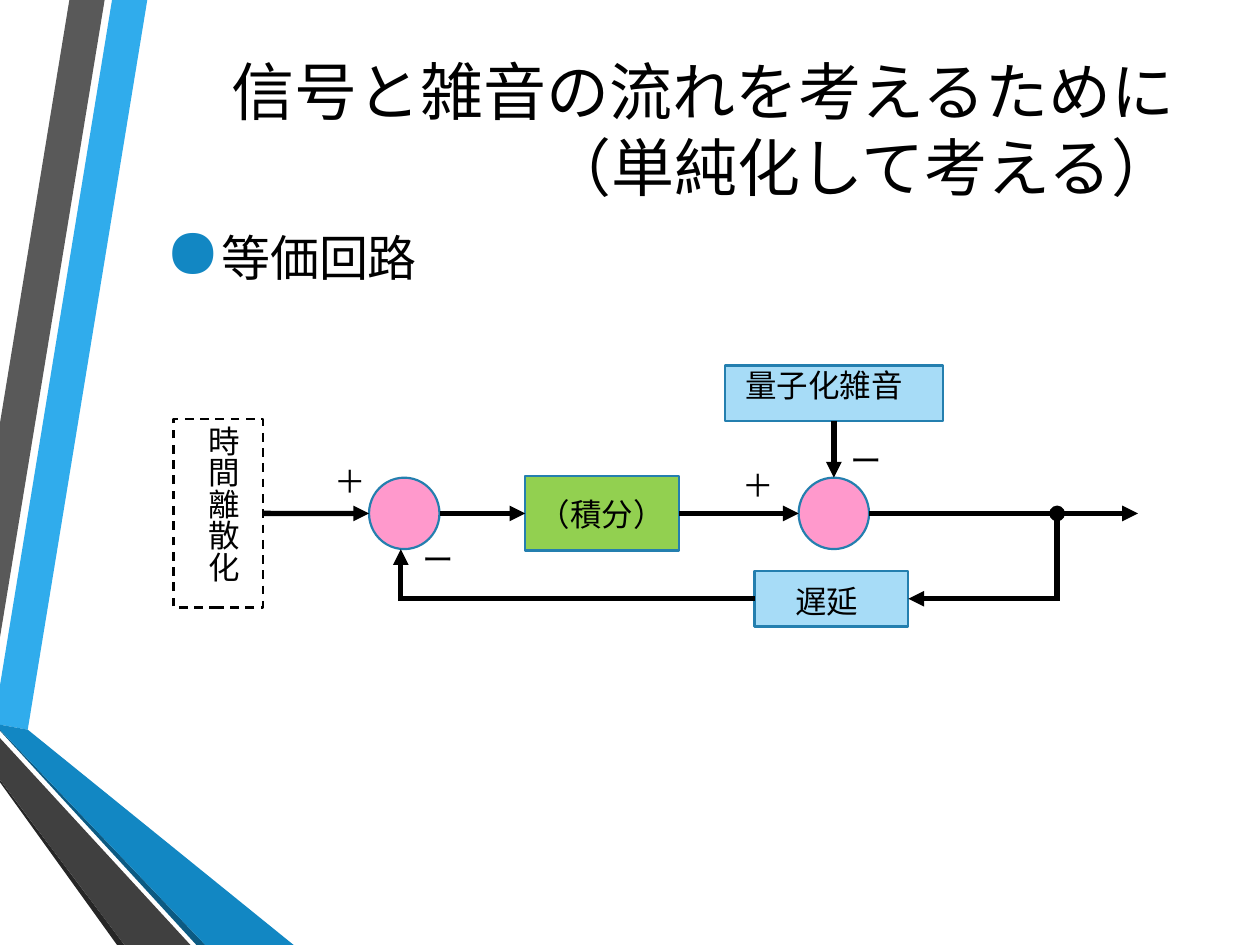
from lxml import etree
from pptx import Presentation
from pptx.dml.color import RGBColor
from pptx.enum.dml import MSO_LINE
from pptx.enum.shapes import MSO_CONNECTOR, MSO_SHAPE
from pptx.enum.text import MSO_ANCHOR, MSO_AUTO_SIZE, PP_ALIGN
from pptx.oxml.ns import qn
from pptx.util import Cm, Pt

RECT, OVAL = MSO_SHAPE.RECTANGLE, MSO_SHAPE.OVAL
STRAIGHT = MSO_CONNECTOR.STRAIGHT
DASH = MSO_LINE.DASH
CENTER, LEFT, RIGHT = PP_ALIGN.CENTER, PP_ALIGN.LEFT, PP_ALIGN.RIGHT
TOP, MIDDLE = MSO_ANCHOR.TOP, MSO_ANCHOR.MIDDLE
FIT_NONE = MSO_AUTO_SIZE.NONE
SIDE_LEFT, SIDE_BOTTOM, SIDE_RIGHT = 1, 2, 3

COLORS = {
    "ink": "000000",
    "outline": "247FAF",
    "sky": "A7DCF7",
    "green": "92D050",
    "pink": "FF99CC",
    "bright_blue": "30ACEC",
    "blue": "1287C3",
    "deep_blue": "0C5A82",
    "gray": "595959",
    "dark_gray": "404040",
    "charcoal": "262626",
}

RIBBONS = [
    ("bright_blue", [(0, 13.82), (0, 14.61), (0.56, 14.71), (2.97, 0), (2.26, 0)]),
    ("gray", [(2.11, 0), (1.4, 0), (0, 8.53), (0, 12.85)]),
    ("charcoal", [(0, 15.72), (0, 15.77), (2.36, 19.05), (2.51, 19.05)]),
    ("deep_blue", [(0, 14.71), (0, 14.73), (3.96, 19.05), (4.14, 19.05)]),
    ("blue", [(0, 14.71), (4.14, 19.05), (5.92, 19.05), (0.56, 14.71), (0, 14.61)]),
    ("dark_gray", [(0, 15.72), (2.51, 19.05), (3.84, 19.05), (0, 14.88)]),
]


def color(name):
    return RGBColor.from_string(COLORS[name])


def write(frame, text, size=18, font="Times New Roman", align=CENTER, anchor=TOP,
          vertical=False):
    frame.word_wrap = True
    frame.auto_size = FIT_NONE
    frame.vertical_anchor = anchor
    if vertical:
        frame._txBody.bodyPr.set("vert", "eaVert")
    paragraph = frame.paragraphs[0]
    paragraph.text = text
    paragraph.alignment = align
    for run in paragraph.runs:
        run.font.size = Pt(size)
        run.font.name = font
        run.font.color.rgb = color("ink")
    return paragraph


def draw_ribbons(slide, left, top):
    for fill, points in RIBBONS:
        corners = [(Cm(left + x), Cm(top + y)) for x, y in points]
        builder = slide.shapes.build_freeform(*corners[0])
        builder.add_line_segments(corners[1:], close=True)
        ribbon = builder.convert_to_shape()
        ribbon.shadow.inherit = False
        ribbon.fill.solid()
        ribbon.fill.fore_color.rgb = color(fill)
        ribbon.line.fill.background()


def place_title(slide, left, top, width, height):
    title = slide.shapes.title
    title.left, title.top, title.width, title.height = map(Cm, (left, top, width, height))
    write(title.text_frame, "信号と雑音の流れを考えるために\v（単純化して考える）",
          size=36, font="Calibri", align=RIGHT, anchor=MIDDLE)


def place_topic(slide, left, top, width, height):
    topic = slide.shapes.add_textbox(*map(Cm, (left, top, width, height)))
    paragraph = write(topic.text_frame, "等価回路", size=28, align=LEFT)
    paragraph.space_after = Pt(6)
    props = paragraph._p.get_or_add_pPr()
    props.set("marL", str(Cm(0.79)))
    props.set("indent", str(-Cm(0.79)))
    bullet_color = etree.SubElement(props, qn("a:buClr"))
    etree.SubElement(bullet_color, qn("a:srgbClr"), val=COLORS["blue"])
    etree.SubElement(props, qn("a:buSzPct"), val="145000")
    etree.SubElement(props, qn("a:buChar"), char="●")


def draw_circuit(slide, left, top):
    axis, feedback = 3.1, 4.82
    feedback_x, tap_x, output_x = 4.58, 17.81, 19.44
    sum_width, sum_height = 1.42, 1.44

    def block(kind, x, middle, width, height, fill=None, line="outline", dash=None):
        shape = slide.shapes.add_shape(
            kind, Cm(left + x), Cm(top + middle - height / 2), Cm(width), Cm(height))
        shape.shadow.inherit = False
        if fill:
            shape.fill.solid()
            shape.fill.fore_color.rgb = color(fill)
        else:
            shape.fill.background()
        shape.line.color.rgb = color(line)
        shape.line.width = Pt(1.25)
        if dash:
            shape.line.dash_style = dash
        return shape

    def wire(start, end, source=None, target=None, head=None, tail=None):
        connector = slide.shapes.add_connector(
            STRAIGHT, Cm(left + start[0]), Cm(top + start[1]),
            Cm(left + end[0]), Cm(top + end[1]))
        if source:
            connector.begin_connect(*source)
        if target:
            connector.end_connect(*target)
        connector.line.color.rgb = color("ink")
        connector.line.width = Pt(3)
        outline = connector.line._get_or_add_ln()
        for tag, style in (("a:headEnd", head), ("a:tailEnd", tail)):
            if style:
                etree.SubElement(outline, qn(tag), type=style)
        etree.SubElement(connector._element.spPr, qn("a:effectLst"))

    def label(text, x, y, width, height=1.02, vertical=False):
        box = slide.shapes.add_textbox(Cm(left + x), Cm(top + y), Cm(width), Cm(height))
        write(box.text_frame, text, vertical=vertical)

    sampler = block(RECT, 0, axis, 1.8, 3.8, line="ink", dash=DASH)
    integrator = block(RECT, 7.09, axis, 3.1, 1.5, "green")
    delay = block(RECT, 11.71, feedback, 3.1, 1.12, "sky")
    noise = block(RECT, 11.11, 0.68, 4.4, 1.12, "sky")
    input_sum, noise_sum = 3.94, 12.6
    for x in (input_sum, noise_sum):
        block(OVAL, x, axis, sum_width, sum_height, "pink")

    wire((1.8, axis), (input_sum, axis), source=(sampler, SIDE_RIGHT), tail="triangle")
    wire((input_sum + sum_width, axis), (7.09, axis),
         target=(integrator, SIDE_LEFT), tail="triangle")
    wire((10.19, axis), (noise_sum, axis), source=(integrator, SIDE_RIGHT), tail="triangle")
    wire((noise_sum + sum_width, axis), (output_x, axis), tail="triangle")
    wire((13.31, 1.24), (13.31, axis - sum_height / 2),
         source=(noise, SIDE_BOTTOM), tail="triangle")
    wire((tap_x, axis), (tap_x, feedback + 0.05), head="oval")
    wire((tap_x, feedback), (14.81, feedback), target=(delay, SIDE_RIGHT), tail="triangle")
    wire((11.71, feedback), (feedback_x, feedback), source=(delay, SIDE_LEFT))
    wire((feedback_x, feedback + 0.05), (feedback_x, axis + sum_height / 2), tail="triangle")

    label("時間離散化", 0.23, 1.08, 1.27, 3.78, vertical=True)
    label("（積分）", 7.04, 2.61, 3.18)
    label("遅延", 11.94, 4.36, 2.46)
    label("量子化雑音", 11.13, 0.01, 3.96)
    for sign, x, y in (("＋", 2.7, 1.94), ("ー", 4.48, 3.52),
                       ("＋", 10.93, 2.02), ("ー", 13.09, 1.51)):
        label(sign, x, y, 1.73)


def main():
    deck = Presentation()
    deck.slide_width, deck.slide_height = Cm(25.4), Cm(19.05)
    slide = deck.slides.add_slide(deck.slide_layouts[5])
    draw_ribbons(slide, 0, 0)
    place_title(slide, 2.34, 1.17, 21.59, 2.84)
    place_topic(slide, 3.07, 4.47, 21.79, 3)
    draw_circuit(slide, 3.5, 7.25)
    deck.save("out.pptx")


if __name__ == "__main__":
    main()
